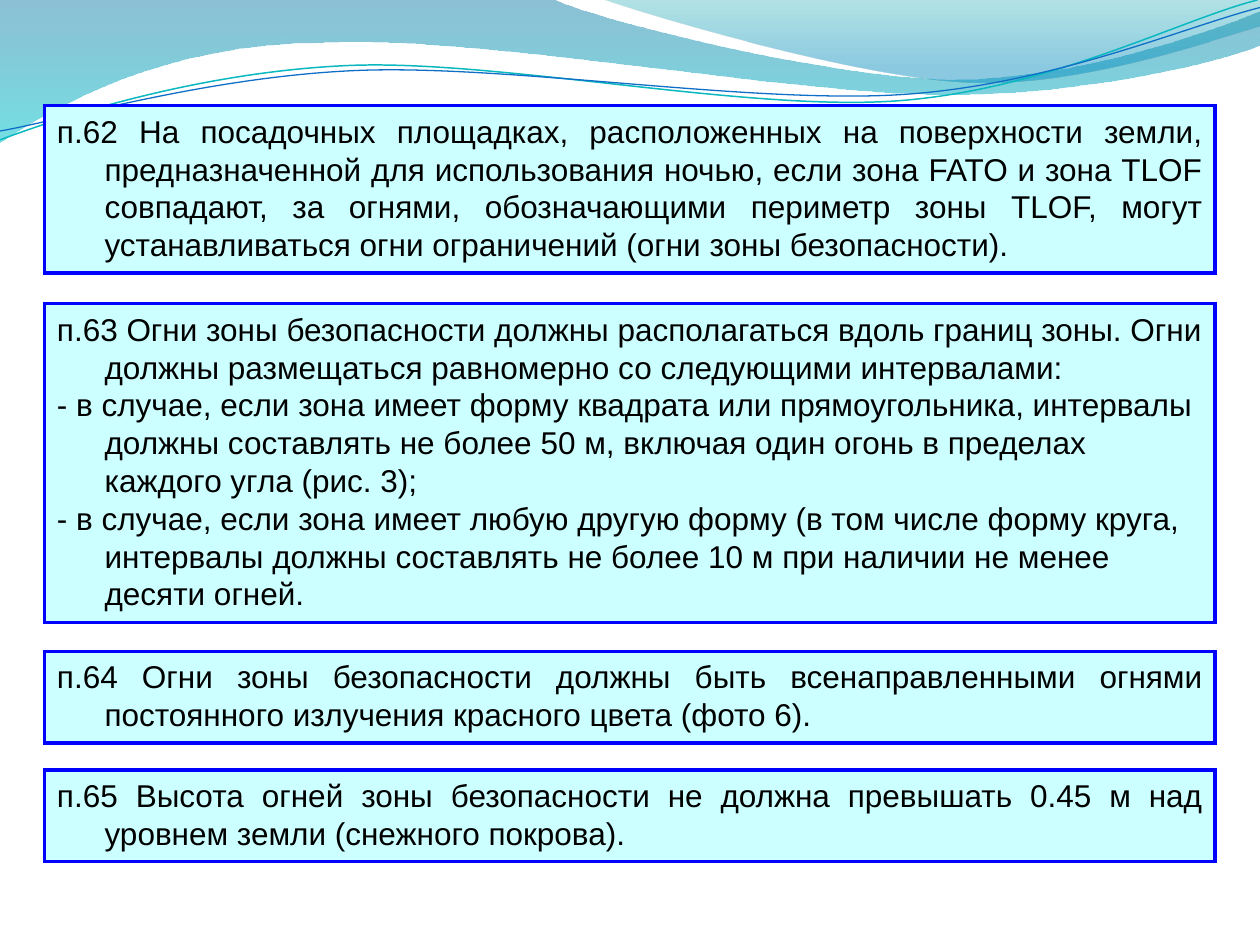
from lxml.etree import SubElement
from pptx import Presentation
from pptx.dml.color import RGBColor
from pptx.enum.shapes import MSO_SHAPE
from pptx.enum.text import MSO_ANCHOR, MSO_AUTO_SIZE, PP_ALIGN
from pptx.oxml.ns import qn
from pptx.util import Cm, Pt

COLORS = {
    "panel": "CCFFFF", "border": "0000FF", "text": "000000",
    "deep": "0074A1", "aqua": "00C6CF", "teal": "00A1A9", "sky": "008BBF",
    "teal_line": "0AB8BF", "blue_line": "0F6FC6",
}
INCH = 2.54

LEFT_WAVE = [
    (0, 0), (4.4, 0), (4.76, 0.17, 6.64, 0.63, 7.58, 0.63),
    (8.53, 0.63, 9.58, 0.26, 10, 0.09), (10, 0.36),
    (9.83, 0.44, 8.7, 0.76, 7.46, 0.75), (6.22, 0.75, 3.82, 0.28, 2.57, 0.34),
    (1.29, 0.35, 0.46, 0.83, 0, 1.13),
]
RIGHT_WAVE = [
    (4.79, 0), (5.09, 0.11, 6.82, 0.62, 7.69, 0.65),
    (8.56, 0.69, 9.61, 0.32, 10, 0.21), (10, 0),
]
TEAL_CURVE = [
    (0, 1.11), (0.48, 0.93, 1.58, 0.57, 2.77, 0.52),
    (3.95, 0.47, 5.93, 0.89, 7.13, 0.8), (8.33, 0.71, 9.38, 0.15, 9.98, 0),
]
BLUE_CURVE = [
    (0, 1.04), (0.47, 0.96, 1.64, 0.61, 2.83, 0.56),
    (4.03, 0.51, 5.97, 0.83, 7.17, 0.75), (8.36, 0.67, 9.41, 0.21, 10, 0.06),
]
PANELS = [
    (2.13, 3.38, PP_ALIGN.JUSTIFY, [
        "п.62 На посадочных площадках, расположенных на поверхности земли, "
        "предназначенной для использования ночью, если зона FATO и зона TLOF "
        "совпадают, за огнями, обозначающими периметр зоны TLOF, могут "
        "устанавливаться огни ограничений (огни зоны безопасности)."]),
    (6.12, 6.43, PP_ALIGN.LEFT, [
        "п.63 Огни зоны безопасности должны располагаться вдоль границ зоны. "
        "Огни должны размещаться равномерно со следующими интервалами:",
        "- в случае, если зона имеет форму квадрата или прямоугольника, "
        "интервалы должны составлять не более 50 м, включая один огонь в "
        "пределах каждого угла (рис. 3);",
        "- в случае, если зона имеет любую другую форму (в том числе форму "
        "круга, интервалы должны составлять не более 10 м при наличии не "
        "менее десяти огней."]),
    (13.13, 1.85, PP_ALIGN.JUSTIFY, [
        "п.64 Огни зоны безопасности должны быть всенаправленными огнями "
        "постоянного излучения красного цвета (фото 6)."]),
    (15.52, 1.85, PP_ALIGN.JUSTIFY, [
        "п.65 Высота огней зоны безопасности не должна превышать 0.45 м над "
        "уровнем земли (снежного покрова)."]),
]


class SlideBuilder:
    """Draws the styled elements of one slide."""

    font_name = "Arial"
    font_size = Pt(18)
    panel_left, panel_width = Cm(0.9), Cm(23.6)
    hanging = Cm(0.96)

    def __init__(self, slide):
        self.slide = slide

    def color(self, name):
        return RGBColor.from_string(COLORS[name])

    def outline(self, segments, close):
        start, *ends = [tuple(Cm(value * INCH) for value in segment[-2:])
                        for segment in segments]
        builder = self.slide.shapes.build_freeform(*start)
        builder.add_line_segments(ends, close=close)
        shape = builder.convert_to_shape()
        shape.shadow.inherit = False
        lines = list(shape.element.spPr.iter(qn("a:lnTo")))
        for line, segment in zip(lines, segments[1:]):
            if len(segment) == 6:
                self.bend(shape, line, segment)
        return shape

    def bend(self, shape, line, segment):
        line.tag = qn("a:cubicBezTo")
        for index in (0, 1):
            x, y = segment[2 * index:2 * index + 2]
            point = SubElement(line, qn("a:pt"))
            point.set("x", str(Cm(x * INCH) - shape.left))
            point.set("y", str(Cm(y * INCH) - shape.top))
            line.insert(index, point)

    def wave(self, segments, stops):
        shape = self.outline(segments, close=True)
        shape.line.fill.background()
        shape.fill.gradient()
        shape.fill.gradient_angle = 270
        for stop, (position, name, _) in zip(shape.fill.gradient_stops, stops):
            stop.position = position
            stop.color.rgb = self.color(name)
        colors = list(shape.element.spPr.iter(qn("a:srgbClr")))
        for color, (_, _, opacity) in zip(colors, stops):
            SubElement(color, qn("a:alpha")).set("val", str(opacity * 1000))

    def curve(self, segments, name, width):
        shape = self.outline(segments, close=False)
        shape.fill.background()
        shape.line.color.rgb = self.color(name)
        shape.line.width = Pt(width)

    def panel(self, top, height, alignment, texts):
        shape = self.slide.shapes.add_shape(
            MSO_SHAPE.RECTANGLE, self.panel_left, Cm(top), self.panel_width, Cm(height))
        shape.shadow.inherit = False
        shape.fill.solid()
        shape.fill.fore_color.rgb = self.color("panel")
        shape.line.color.rgb = self.color("border")
        shape.line.width = Pt(2)
        border = shape.element.spPr.find(qn("a:ln"))
        SubElement(border, qn("a:miter")).set("lim", "800000")
        frame = shape.text_frame
        frame.word_wrap = True
        frame.auto_size = MSO_AUTO_SIZE.SHAPE_TO_FIT_TEXT
        frame.vertical_anchor = MSO_ANCHOR.TOP
        frame.text = "\n".join(texts)
        for paragraph in frame.paragraphs:
            properties = paragraph._p.get_or_add_pPr()
            properties.set("marL", str(self.hanging))
            properties.set("indent", str(-self.hanging))
            paragraph.alignment = alignment
            paragraph.font.name = self.font_name
            paragraph.font.size = self.font_size
            paragraph.font.color.rgb = self.color("text")


def main():
    presentation = Presentation()
    presentation.slide_width, presentation.slide_height = Cm(25.4), Cm(19.05)
    builder = SlideBuilder(presentation.slides.add_slide(presentation.slide_layouts[6]))
    builder.wave(LEFT_WAVE, [(0, "deep", 45), (1, "aqua", 55)])
    builder.wave(RIGHT_WAVE, [(0, "teal", 30), (0.8, "sky", 45)])
    builder.curve(TEAL_CURVE, "teal_line", 0.85)
    builder.curve(BLUE_CURVE, "blue_line", 0.75)
    for panel in PANELS:
        builder.panel(*panel)
    presentation.save("out.pptx")


if __name__ == "__main__":
    main()
